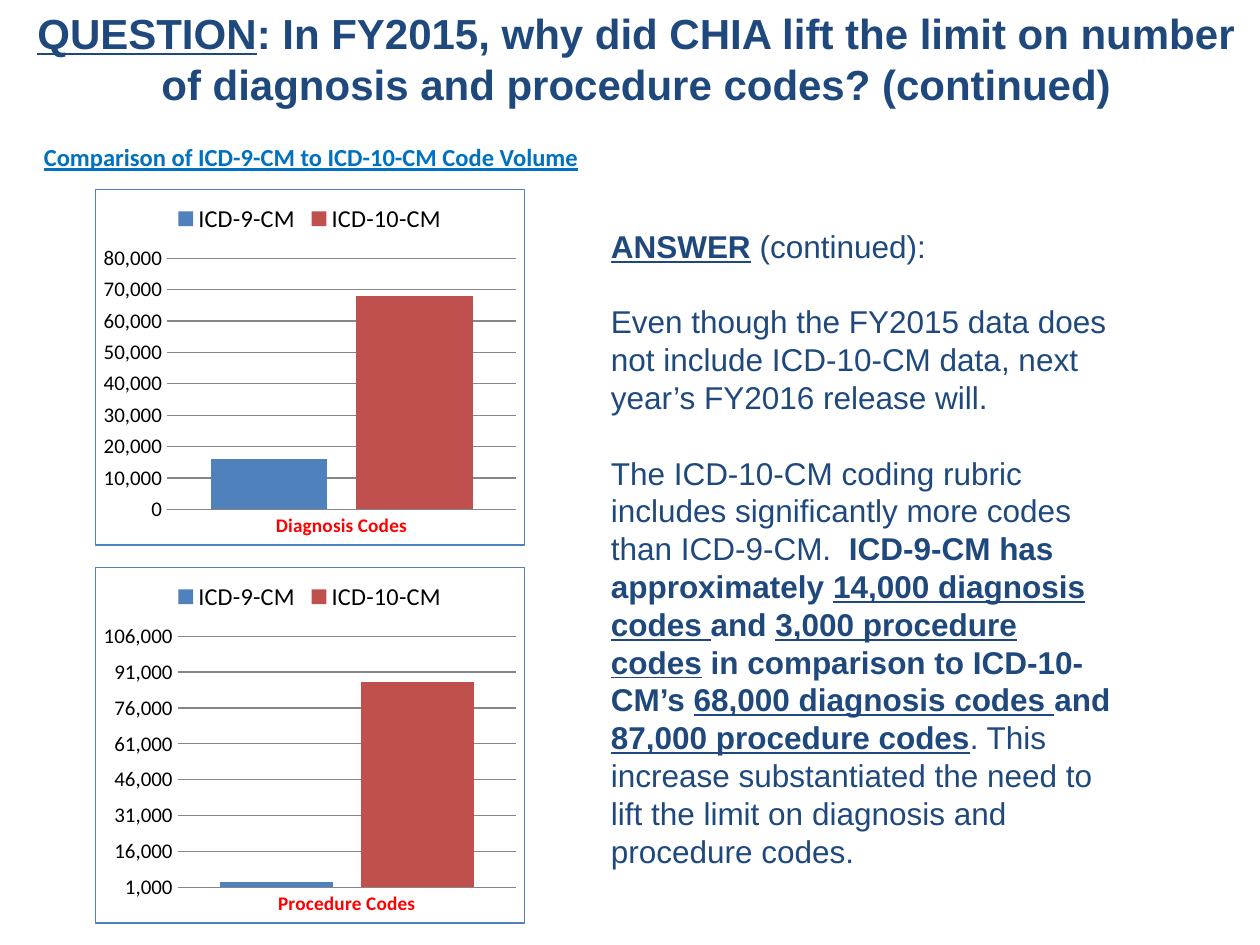
from lxml import etree
from pptx import Presentation
from pptx.chart.data import CategoryChartData
from pptx.dml.color import RGBColor
from pptx.enum import chart as ch, text as tx
from pptx.oxml.ns import qn
from pptx.util import Inches, Pt

# Content: each run is (wording, style), with b for bold and u for underlined
TITLE = [[("QUESTION", "bu"),
          (": In FY2015, why did CHIA lift the limit on number of diagnosis "
           "and procedure codes? (continued)", "b")]]
HEADING = [[("Comparison of ICD-9-CM to ICD-10-CM Code Volume", "bu")]]
ANSWER = [
    [("ANSWER", "bu"), (" (continued):", "")],
    [("Even though the FY2015 data does not include ICD-10-CM data, "
      "next year’s FY2016 release will.", "")],
    [("The ICD-10-CM coding rubric includes significantly more codes than ICD-9-CM.  ", ""),
     ("ICD-9-CM has approximately ", "b"),
     ("14,000 diagnosis codes ", "bu"),
     ("and ", "b"),
     ("3,000 procedure codes", "bu"),
     (" in comparison to ICD-10-CM’s ", "b"),
     ("68,000 diagnosis codes ", "bu"),
     ("and ", "b"),
     ("87,000 procedure codes", "bu"),
     (". This increase substantiated the need to lift the limit on diagnosis "
      "and procedure codes.", "")],
]
SERIES = [("ICD-9-CM", "icd9"), ("ICD-10-CM", "icd10")]
# Category, one value per series, axis minimum, maximum and step
CHARTS = [
    ("Diagnosis Codes", (16000, 68000), 0, 80000, 10000),
    ("Procedure Codes", (3000, 87000), 1000, 106000, 15000),
]
COLORS = {"navy": "1F497D", "heading": "0070C0", "icd9": "4F81BD", "icd10": "C0504D",
          "category": "FF0000", "label": "000000", "grid": "868686"}


def color(name):
    return RGBColor.from_string(COLORS[name])


def set_font(font, size, hue, face="Calibri", bold=False):
    font.name, font.size, font.bold = face, Pt(size), bold
    font.color.rgb = color(hue)


def add_text(slide, box, paragraphs, size, hue, face="Arial", wrap=True,
             align=tx.PP_ALIGN.LEFT, anchor=tx.MSO_ANCHOR.TOP, gap=0):
    frame = slide.shapes.add_textbox(*map(Inches, box)).text_frame
    frame.word_wrap, frame.vertical_anchor = wrap, anchor
    for i, runs in enumerate(paragraphs):
        paragraph = frame.add_paragraph() if i else frame.paragraphs[0]
        paragraph.alignment = align
        paragraph.space_before = Pt(gap if i else 0)
        for wording, style in runs:
            run = paragraph.add_run()
            run.text = wording
            set_font(run.font, size, hue, face, "b" in style)
            run.font.underline = "u" in style


def add_border(chart, hue):
    props = etree.Element(qn("c:spPr"))
    line = etree.SubElement(props, qn("a:ln"), w=str(Pt(0.75)))
    fill = etree.SubElement(line, qn("a:solidFill"))
    etree.SubElement(fill, qn("a:srgbClr"), val=COLORS[hue])
    chart.element.find(qn("c:chart")).addnext(props)


def add_codes_chart(slide, box, category, values, low, high, step):
    data = CategoryChartData(number_format="#,##0")
    data.categories = [category]
    for (name, _), value in zip(SERIES, values):
        data.add_series(name, [value])
    chart = slide.shapes.add_chart(
        ch.XL_CHART_TYPE.COLUMN_CLUSTERED, *map(Inches, box), data).chart
    set_font(chart.font, 18, "label")
    chart.has_title = False
    add_border(chart, "icd9")

    # Legend
    chart.has_legend = True
    chart.legend.position = ch.XL_LEGEND_POSITION.TOP
    chart.legend.include_in_layout = False
    set_font(chart.legend.font, 14, "label")

    # Columns
    plot = chart.plots[0]
    plot.gap_width, plot.overlap, plot.vary_by_categories = 75, -25, False
    for series, (_, hue) in zip(plot.series, SERIES):
        series.format.fill.solid()
        series.format.fill.fore_color.rgb = color(hue)

    # Axes
    codes, volume = chart.category_axis, chart.value_axis
    for axis in (codes, volume):
        axis.major_tick_mark = axis.minor_tick_mark = ch.XL_TICK_MARK.NONE
    set_font(codes.tick_labels.font, 11, "category", bold=True)
    codes.format.line.color.rgb = color("grid")
    set_font(volume.tick_labels.font, 12, "label")
    volume.tick_labels.number_format = "#,##0"
    volume.tick_labels.number_format_is_linked = False
    volume.minimum_scale, volume.maximum_scale, volume.major_unit = low, high, step
    volume.format.line.fill.background()
    volume.has_major_gridlines = True
    volume.major_gridlines.format.line.color.rgb = color("grid")


def main():
    deck = Presentation()
    deck.slide_width, deck.slide_height = Inches(10), Inches(7.5)
    slide = deck.slides.add_slide(deck.slide_layouts[6])

    # Question
    add_text(slide, (0.09, -0.08, 9.92, 1.08), TITLE, 24, "navy",
             align=tx.PP_ALIGN.CENTER, anchor=tx.MSO_ANCHOR.MIDDLE)
    # Charts, stacked at equal steps
    for i, chart in enumerate(CHARTS):
        add_codes_chart(slide, (0.75, 1.5 + 3 * i, 3.42, 2.83), *chart)
    # Answer, with one line of space between paragraphs
    add_text(slide, (4.75, 1.75, 4.17, 5.25), ANSWER, 18, "navy", gap=21.6)
    # Heading above the charts
    add_text(slide, (0.25, 1.08, 4.47, 0.34), HEADING, 14, "heading",
             face="Calibri", wrap=False)
    deck.save("out.pptx")


if __name__ == "__main__":
    main()
